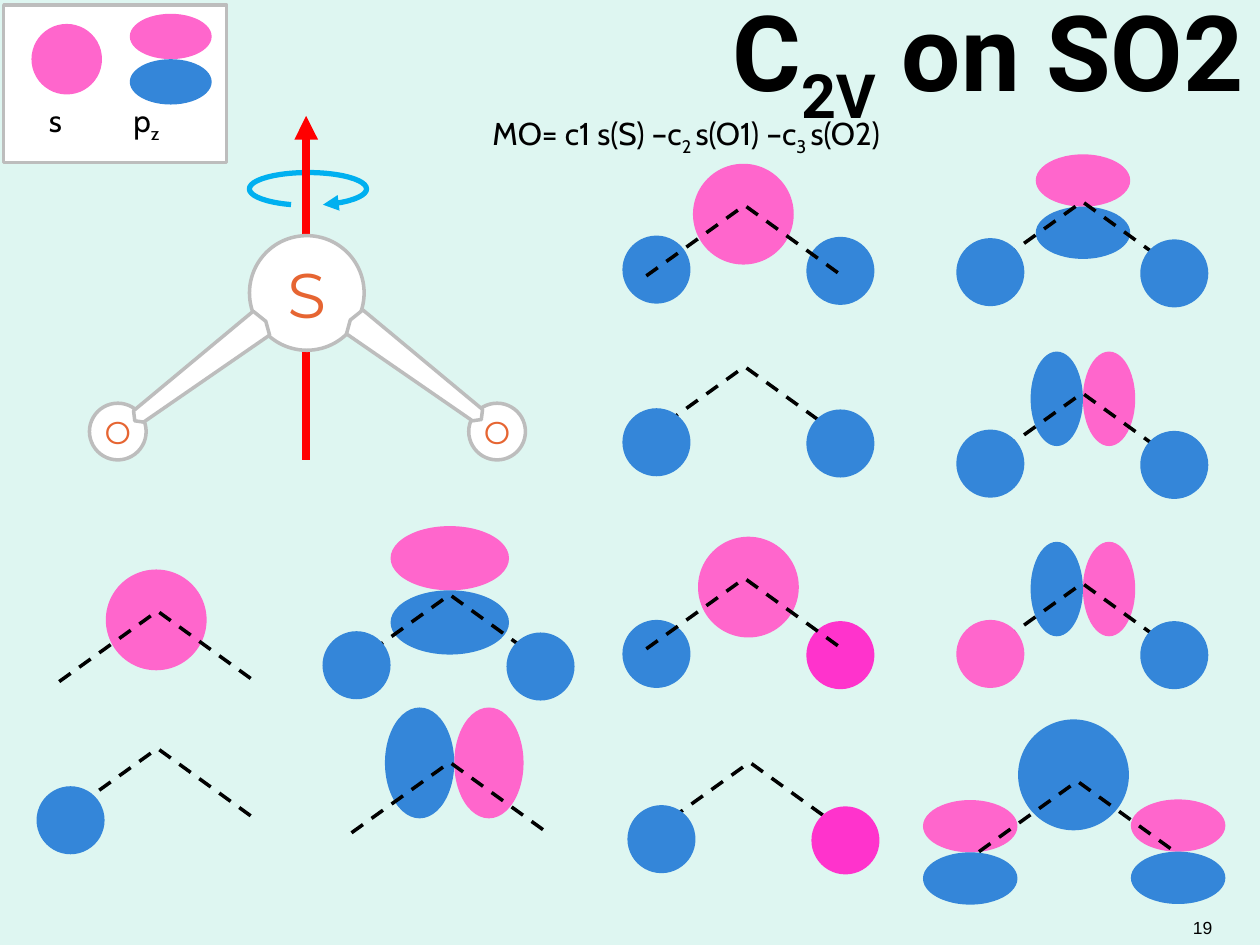
"""Draw the slide of sulfur dioxide orbital combinations under C2v symmetry."""
from dataclasses import dataclass
from typing import Optional

import lxml.etree
import pptx
import pptx.dml.color
import pptx.enum.dml
import pptx.enum.shapes
import pptx.enum.text
import pptx.oxml.ns
import pptx.util

COLUMNS, ROWS = 100, 75
CELL = pptx.util.Inches(0.1)
PINK, MAGENTA, BLUE = "FF66CC", "FF33CC", "3486D9"
BLACK, WHITE, GREY, ORANGE = "000000", "FFFFFF", "BDBDBD", "E66532"
OXYGEN_SIZE, OXYGEN_GAP = 5.4, 14.6
SHAPES = pptx.enum.shapes.MSO_SHAPE
ALIGN = pptx.enum.text.PP_ALIGN
ANCHOR = pptx.enum.text.MSO_ANCHOR


@dataclass(frozen=True)
class Lobe:
    """One ellipse, by centre and size in grid cells."""
    column: float
    row: float
    width: float
    height: float
    colour: str


@dataclass(frozen=True)
class Combination:
    """A bond corner, its orbitals behind the bond and its oxygen s orbitals."""
    bond: tuple[float, float]
    behind: tuple[Lobe, ...] = ()
    oxygen: tuple[float, float] = (0, 0)
    oxygen_colours: tuple[str, ...] = ()
    oxygen_in_front: bool = True


@dataclass(frozen=True)
class Piece:
    """One run of text, optionally a subscript."""
    text: str
    subscript: bool = False


def s_orbital(column: float, row: float, size: float, colour: str = PINK) -> tuple[Lobe, ...]:
    """Return a round orbital."""
    return (Lobe(column, row, size, size, colour),)


def pz_orbital(column: float, row: float, width: float = 7.5, height: float = 4.15) -> tuple[Lobe, ...]:
    """Return a pink lobe over a blue one, touching at the given point."""
    return (Lobe(column, row - height / 2, width, height, PINK),
            Lobe(column, row + height / 2, width, height, BLUE))


def py_orbital(column: float, row: float, width: float = 4.15, height: float = 7.5) -> tuple[Lobe, ...]:
    """Return a pink lobe right of a blue one, touching at the given point."""
    return (Lobe(column + width / 2, row, width, height, PINK),
            Lobe(column - width / 2, row, width, height, BLUE))


COMBINATIONS = (
    Combination((51.3, 16.3), s_orbital(59, 17, 8), (52.1, 21.4), (BLUE, BLUE), False),
    Combination((78.1, 16), pz_orbital(85.95, 16.4), (78.6, 21.6), (BLUE, BLUE)),
    Combination((51.3, 29.1), (), (52.1, 35.1), (BLUE, BLUE)),
    Combination((78.1, 31.2), py_orbital(85.95, 31.65), (78.6, 36.8), (BLUE, BLUE)),
    Combination((51.3, 45.9), s_orbital(59.4, 46.6, 8), (52.1, 51.9), (BLUE, MAGENTA), False),
    Combination((78.1, 46.3), py_orbital(85.95, 46.75), (78.6, 51.9), (PINK, BLUE)),
    Combination((51.7, 60.5), (), (52.5, 66.6), (BLUE, MAGENTA)),
    Combination((77.7, 62), s_orbital(85.2, 61.5, 8.8, BLUE)
                + pz_orbital(93.5, 67.6) + pz_orbital(77, 67.65)),
    Combination((4.7, 48.5), s_orbital(12.4, 49.2, 8)),
    Combination((27.9, 47.2), pz_orbital(35.7, 46.85, 9.4, 5.1), (28.3, 52.8), (BLUE, BLUE)),
    Combination((4.7, 59.4), (), (5.6, 65.1), (BLUE,)),
    Combination((27.9, 60.5), py_orbital(36.05, 60.55, 5.5, 8.8)),
)


def cells(*counts: float) -> list[int]:
    """Convert grid cells to slide lengths."""
    return [round(count * CELL) for count in counts]


def rgb(colour: str) -> pptx.dml.color.RGBColor:
    """Convert a hex string to a colour."""
    return pptx.dml.color.RGBColor.from_string(colour)


def paint(shape, fill: Optional[str], line: Optional[str] = None, width: float = 2) -> None:
    """Set fill and outline, and drop the shadow."""
    shape.shadow.inherit = False
    if fill:
        shape.fill.solid()
        shape.fill.fore_color.rgb = rgb(fill)
    else:
        shape.fill.background()
    if line:
        shape.line.color.rgb = rgb(line)
        shape.line.width = pptx.util.Pt(width)
    else:
        shape.line.fill.background()


def add_arrowhead(shape) -> None:
    """Put a triangle at the end of a shape's line."""
    outline = shape._element.spPr.find(pptx.oxml.ns.qn("a:ln"))
    lxml.etree.SubElement(outline, pptx.oxml.ns.qn("a:tailEnd"), type="triangle")


def write(paragraph, pieces: tuple[Piece, ...], font: str, size: float,
          colour: str = BLACK, bold: bool = False) -> None:
    """Add formatted runs to a paragraph."""
    for piece in pieces:
        run = paragraph.add_run()
        run.text = piece.text
        run.font.name, run.font.size, run.font.bold = font, pptx.util.Pt(size), bold
        run.font.color.rgb = rgb(colour)
        if piece.subscript:
            run._r.get_or_add_rPr().set("baseline", "-25000")


def add_text(slide, box: tuple[float, ...], pieces: tuple[Piece, ...], font: str, size: float,
             align=ALIGN.LEFT, tab: Optional[float] = None) -> None:
    """Add a one-paragraph text box, with a tab stop if given."""
    frame = slide.shapes.add_textbox(*cells(*box)).text_frame
    frame.word_wrap = True
    paragraph = frame.paragraphs[0]
    paragraph.alignment = align
    if tab:
        properties = paragraph._p.get_or_add_pPr()
        stops = lxml.etree.SubElement(properties, pptx.oxml.ns.qn("a:tabLst"))
        lxml.etree.SubElement(stops, pptx.oxml.ns.qn("a:tab"), pos=str(cells(tab)[0]), algn="l")
    write(paragraph, pieces, font, size)


def add_lobe(slide, lobe: Lobe, line: Optional[str] = None):
    """Draw an ellipse around its centre."""
    ellipse = slide.shapes.add_shape(SHAPES.OVAL, *cells(
        lobe.column - lobe.width / 2, lobe.row - lobe.height / 2, lobe.width, lobe.height))
    paint(ellipse, lobe.colour, line)
    return ellipse


def add_outline(slide, points: list[tuple[float, float]], close: bool):
    """Build a freeform through grid points."""
    builder = slide.shapes.build_freeform(*cells(*points[0]), scale=1.0)
    builder.add_line_segments([tuple(cells(*point)) for point in points[1:]], close=close)
    return builder.convert_to_shape()


def add_combination(slide, combination: Combination) -> None:
    """Draw the orbitals and the dashed bond of one combination."""
    column, row = combination.oxygen
    oxygens = tuple(Lobe(column + OXYGEN_GAP * side, row + 0.1 * side, OXYGEN_SIZE, OXYGEN_SIZE, colour)
                    for side, colour in enumerate(combination.oxygen_colours))
    in_front = combination.oxygen_in_front
    for lobe in combination.behind + (() if in_front else oxygens):
        add_lobe(slide, lobe)
    left, top = combination.bond
    bond = add_outline(slide, [(left, top + 5.6), (left + 7.8, top), (left + 15.4, top + 5.5)], False)
    paint(bond, None, BLACK)
    bond.line.dash_style = pptx.enum.dml.MSO_LINE.DASH
    for lobe in oxygens if in_front else ():
        add_lobe(slide, lobe)


def add_molecule(slide) -> None:
    """Draw the molecule with its rotation axis."""
    turn = slide.shapes.add_shape(SHAPES.ARC, *cells(19.8, 13.7, 9.3, 2.6))
    turn.adjustments[0], turn.adjustments[1] = 82.32, 27.92
    paint(turn, None, "00B0F0", 3)
    add_arrowhead(turn)
    axis = slide.shapes.add_connector(pptx.enum.shapes.MSO_CONNECTOR.STRAIGHT,
                                      *cells(24.3, 36.5, 24.3, 9.2))
    axis.line.color.rgb, axis.line.width = rgb("FF0000"), pptx.util.Pt(4.5)
    add_arrowhead(axis)
    lxml.etree.SubElement(axis._element.spPr, pptx.oxml.ns.qn("a:effectLst"))
    for name, column, row, size, points in (
            ("O", 39.45, 34.25, 4.5, 18), ("O", 9.35, 34.25, 4.5, 18), ("S", 24.35, 23.25, 9.1, 36)):
        atom = add_lobe(slide, Lobe(column, row, size, size, WHITE), GREY)
        frame = atom.text_frame
        frame.margin_left = frame.margin_right = frame.margin_top = frame.margin_bottom = 0
        frame.word_wrap, frame.vertical_anchor = False, ANCHOR.MIDDLE
        frame.paragraphs[0].alignment = ALIGN.CENTER
        write(frame.paragraphs[0], (Piece(name),), "Montserrat", points, ORANGE)
    stick = [(20.1, 24.7), (21.1, 25.5), (21.4, 26.6), (11.4, 33.5), (10.7, 33.4), (10.6, 32.6)]
    for points in (stick, [(48.9 - column, row - 0.1) for column, row in stick]):
        paint(add_outline(slide, points, True), WHITE, GREY)


def add_legend(slide) -> None:
    """Draw the key to the s and p orbitals."""
    panel = slide.shapes.add_shape(SHAPES.RECTANGLE, *cells(0.3, 0.4, 17.7, 12.5))
    paint(panel, WHITE, GREY)
    for lobe in s_orbital(5.3, 4.7, 5.6) + pz_orbital(13.55, 4.7, 6.5, 3.6):
        add_lobe(slide, lobe)
    add_text(slide, (2.9, 7.5, 15.9, 3.5), (Piece("s\tp"), Piece("z", True)), "Cabin", 18, tab=6.7)


def main() -> None:
    """Build and save the slide."""
    deck = pptx.Presentation()
    deck.slide_width, deck.slide_height = cells(COLUMNS, ROWS)
    slide = deck.slides.add_slide(deck.slide_layouts[5])
    slide.background.fill.solid()
    slide.background.fill.fore_color.rgb = rgb("DEF6F1")
    title = slide.shapes.title
    title.left, title.top, title.width, title.height = cells(2.4, 0.5, 97.3, 8.3)
    title.text_frame.auto_size = pptx.enum.text.MSO_AUTO_SIZE.NONE
    title.text_frame.vertical_anchor = ANCHOR.MIDDLE
    heading = title.text_frame.paragraphs[0]
    heading.alignment = ALIGN.RIGHT
    write(heading, (Piece("C"), Piece("2V", True), Piece(" on SO2")), "Roboto", 60, bold=True)
    add_text(slide, (73.9, 72.3, 23.3, 2.5), (Piece("19"),), "Arial", 10, ALIGN.RIGHT)
    add_molecule(slide)
    for combination in COMBINATIONS:
        add_combination(slide, combination)
    add_legend(slide)
    add_text(slide, (38.1, 8.6, 38.6, 4), (
        Piece("MO= c1 s(S) –c"), Piece("2 ", True), Piece("s(O1) –c"),
        Piece("3 ", True), Piece("s(O2)")), "Cabin", 18)
    deck.save("out.pptx")


if __name__ == "__main__":
    main()
